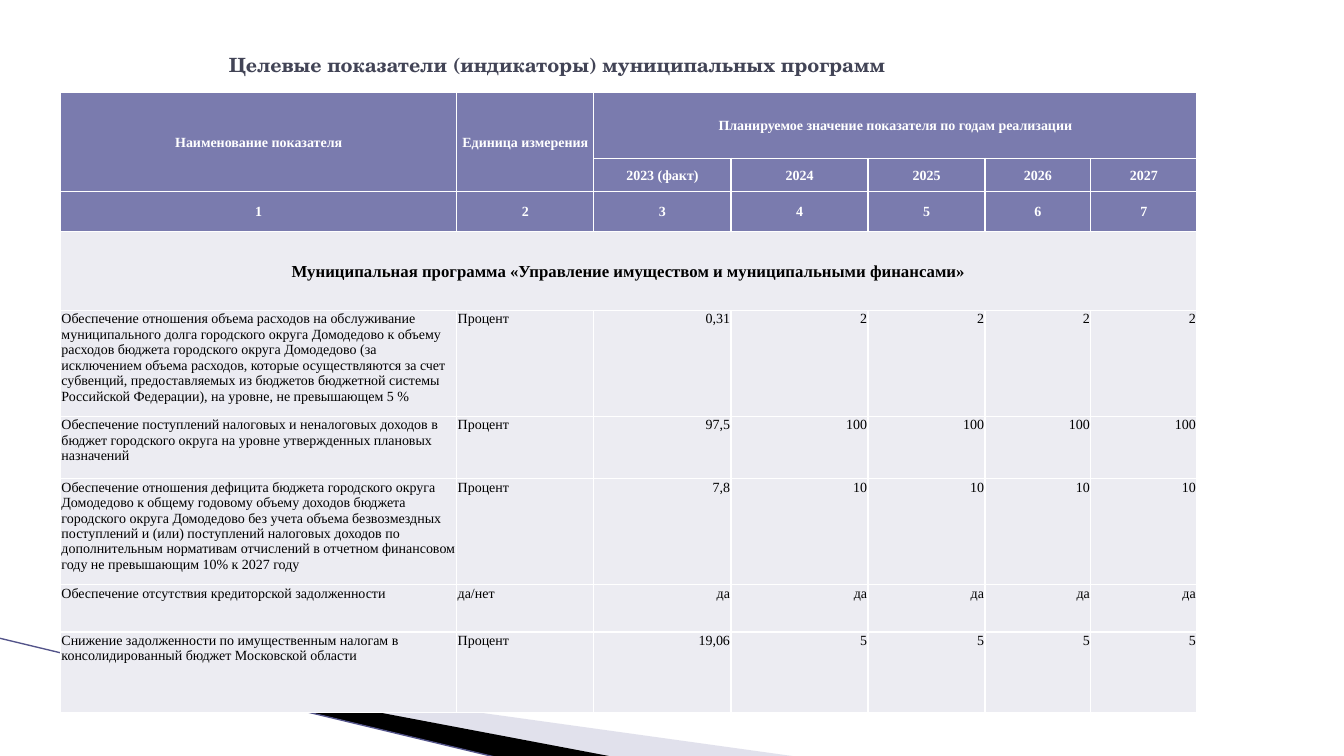
from dataclasses import dataclass

from lxml import etree
from pptx import Presentation, util as u
from pptx.dml.color import RGBColor
from pptx.enum import shapes, text
from pptx.oxml import ns

EMU_PER_PX = 9144  # 100 px to the inch


@dataclass(frozen=True)
class Theme:
    title_font: str = "TeX Gyre Schola"
    table_font: str = "Times New Roman"
    title_color: str = "424456"
    header_fill: str = "7A7BAE"
    body_fill: str = "ECECF2"
    white: str = "FFFFFF"
    black: str = "000000"
    pale_ray: str = "B6B6D1"
    thin_line: str = "53548A"
    title_size: float = 14
    section_size: float = 12
    cell_size: float = 10


@dataclass(frozen=True)
class Ray:
    points: tuple[tuple[int, int], ...]
    color: str
    opacity: int = 100


@dataclass(frozen=True)
class Indicator:
    name: str
    unit: str
    fact: str
    plan: str


THEME = Theme()
LEFT, CENTER, RIGHT = text.PP_ALIGN.LEFT, text.PP_ALIGN.CENTER, text.PP_ALIGN.RIGHT
TOP, MIDDLE = text.MSO_ANCHOR.TOP, text.MSO_ANCHOR.MIDDLE

RAYS = (
    Ray(((73, 651), (793, 751), (608, 751), (73, 650)), THEME.pale_ray, 40),
    Ray(((71, 649), (609, 751), (496, 752), (72, 650)), THEME.black),
)
COLUMN_WIDTHS = (393, 136, 136, 136, 116, 105, 105)
ROW_HEIGHTS = (65, 33, 40, 78, 105, 62, 105, 47, 80)
YEARS = ("2023 (факт)", "2024", "2025", "2026", "2027")
HEADER_ROWS = (
    ("Наименование показателя", "Единица измерения",
     "Планируемое значение показателя по годам реализации", "", "", "", ""),
    ("", "", *YEARS),
    tuple(str(number) for number in range(1, 8)),
)
SECTION = "Муниципальная программа «Управление имуществом и муниципальными финансами»"
SECTION_ROW = len(HEADER_ROWS)
INDICATORS = (
    Indicator("Обеспечение отношения объема расходов на обслуживание муниципального долга "
              "городского округа Домодедово к объему расходов бюджета городского округа "
              "Домодедово (за исключением объема расходов, которые осуществляются за счет "
              "субвенций, предоставляемых из бюджетов бюджетной системы Российской Федерации), "
              "на уровне, не превышающем 5 %", "Процент", "0,31", "2"),
    Indicator("Обеспечение поступлений налоговых и неналоговых доходов в бюджет городского "
              "округа на уровне утвержденных плановых назначений", "Процент", "97,5", "100"),
    Indicator("Обеспечение отношения дефицита бюджета городского округа Домодедово к общему "
              "годовому объему доходов бюджета городского округа Домодедово без учета объема "
              "безвозмездных поступлений и (или) поступлений налоговых доходов по "
              "дополнительным нормативам отчислений в отчетном финансовом году не превышающим "
              "10% к 2027 году", "Процент", "7,8", "10"),
    Indicator("Обеспечение отсутствия кредиторской задолженности", "да/нет", "да", "да"),
    Indicator("Снижение задолженности по имущественным налогам в консолидированный бюджет "
              "Московской области", "Процент", "19,06", "5"),
)
# First and last (row, column) of each merged area
MERGES = (((0, 0), (1, 0)), ((0, 1), (1, 1)), ((0, 2), (0, 6)),
          ((SECTION_ROW, 0), (SECTION_ROW, 6)))


def px(length: int) -> u.Emu:
    return u.Emu(length * EMU_PER_PX)


def rgb(color: str) -> RGBColor:
    return RGBColor.from_string(color)


def write(frame, content: str, *, size: float = THEME.cell_size, color: str = THEME.black,
          bold: bool = False, align=LEFT, font: str = THEME.table_font) -> None:
    para = frame.paragraphs[0]
    para.alignment = align
    span = para.add_run()
    span.text = content
    span.font.name, span.font.size = font, u.Pt(size)
    span.font.bold, span.font.color.rgb = bold, rgb(color)


def draw_ray(slide, ray: Ray) -> None:
    builder = slide.shapes.build_freeform(*ray.points[0], scale=EMU_PER_PX)
    builder.add_line_segments(ray.points[1:], close=True)
    shape = builder.convert_to_shape()
    shape.shadow.inherit = False
    shape.fill.solid()
    shape.fill.fore_color.rgb = rgb(ray.color)
    shape.line.fill.background()
    if ray.opacity < 100:
        color = shape.fill._xPr.find(".//" + ns.qn("a:srgbClr"))
        etree.SubElement(color, ns.qn("a:alpha"), val=str(ray.opacity * 1000))


def draw_thin_line(slide) -> None:
    line = slide.shapes.add_connector(shapes.MSO_CONNECTOR.STRAIGHT,
                                      px(-1), px(633), px(495), px(752))
    line.line.color.rgb = rgb(THEME.thin_line)
    line.line.width = u.Pt(0.95)
    etree.SubElement(line._element.spPr, ns.qn("a:effectLst"))


def add_title(slide) -> None:
    title = slide.shapes.title
    title.left, title.top, title.width, title.height = px(217), px(30), px(900), px(69)
    title.text_frame.vertical_anchor = MIDDLE
    title.text_frame.word_wrap = True
    write(title.text_frame, "Целевые показатели (индикаторы) муниципальных программ",
          size=THEME.title_size, color=THEME.title_color, bold=True, font=THEME.title_font)


def style_cell(cell, fill: str, anchor) -> None:
    """Set the margins, white borders and fill of a cell."""
    cell.margin_left = cell.margin_right = cell.margin_top = px(1)
    cell.margin_bottom = 0
    cell.vertical_anchor = anchor
    properties = cell._tc.get_or_add_tcPr()
    for side in ("lnL", "lnR", "lnT", "lnB"):
        border = etree.SubElement(properties, ns.qn("a:" + side), w=str(u.Pt(1)))
        paint = etree.SubElement(border, ns.qn("a:solidFill"))
        etree.SubElement(paint, ns.qn("a:srgbClr"), val=THEME.white)
    cell.fill.solid()
    cell.fill.fore_color.rgb = rgb(fill)


def add_indicator_table(slide) -> None:
    rows = [*HEADER_ROWS, (SECTION,) + ("",) * 6]
    rows += [(item.name, item.unit, item.fact) + (item.plan,) * 4 for item in INDICATORS]
    table = slide.shapes.add_table(len(ROW_HEIGHTS), len(COLUMN_WIDTHS), px(60), px(92),
                                   px(sum(COLUMN_WIDTHS)), px(sum(ROW_HEIGHTS))).table
    for column, width in zip(table.columns, COLUMN_WIDTHS):
        column.width = px(width)
    for row, height in zip(table.rows, ROW_HEIGHTS):
        row.height = px(height)
    for first, last in MERGES:
        table.cell(*first).merge(table.cell(*last))

    for r, values in enumerate(rows):
        is_header, is_body = r < SECTION_ROW, r > SECTION_ROW
        for c, value in enumerate(values):
            cell = table.cell(r, c)
            style_cell(cell, THEME.header_fill if is_header else THEME.body_fill,
                       TOP if is_body else MIDDLE)
            if value:
                body_align = LEFT if c < 2 else RIGHT
                write(cell.text_frame, value, bold=not is_body,
                      size=THEME.section_size if r == SECTION_ROW else THEME.cell_size,
                      color=THEME.white if is_header else THEME.black,
                      align=body_align if is_body else CENTER)


def main() -> None:
    deck = Presentation()
    deck.slide_width, deck.slide_height = px(1333), px(750)
    slide = deck.slides.add_slide(deck.slide_layouts.get_by_name("Title Only"))
    for ray in RAYS:
        draw_ray(slide, ray)
    draw_thin_line(slide)
    add_title(slide)
    add_indicator_table(slide)
    deck.save("out.pptx")


if __name__ == "__main__":
    main()
